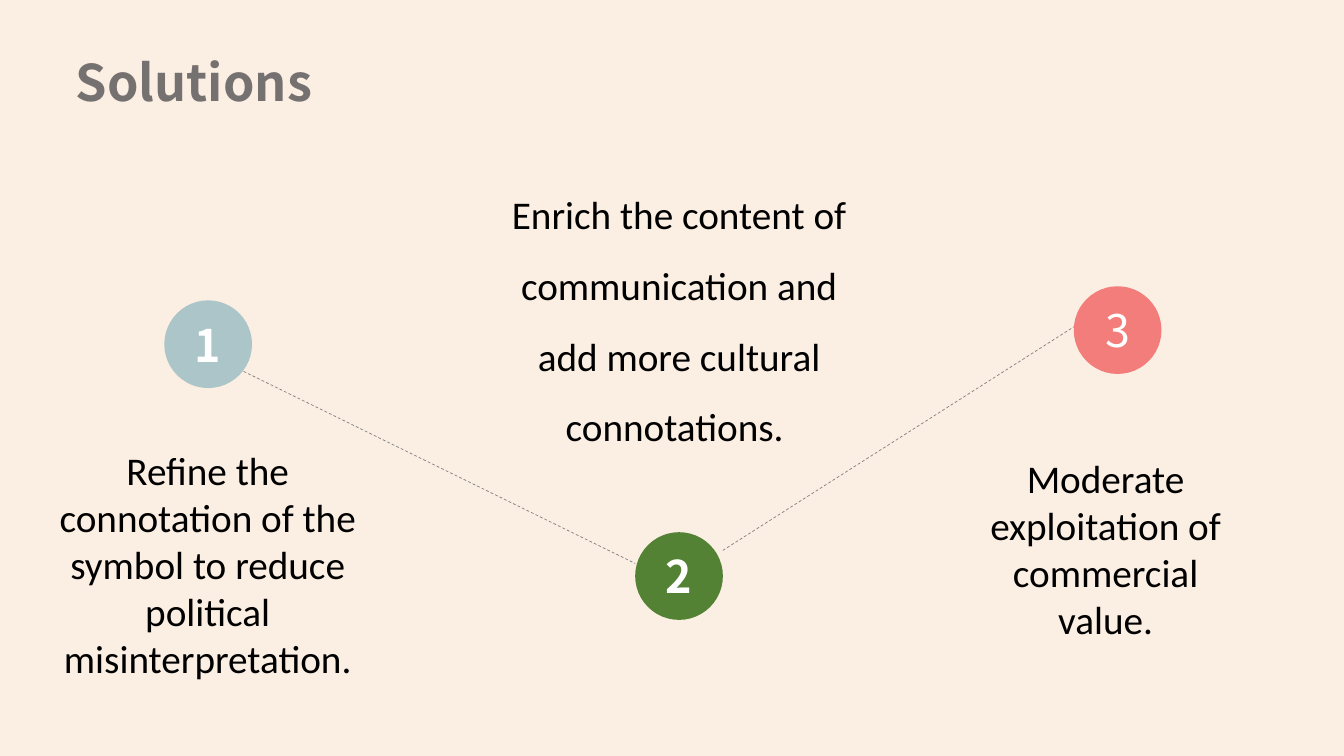
from dataclasses import dataclass

from lxml import etree
from pptx import Presentation
from pptx.dml.color import RGBColor
from pptx.enum.dml import MSO_LINE
from pptx.enum.shapes import MSO_CONNECTOR, MSO_SHAPE
from pptx.enum.text import MSO_ANCHOR, PP_ALIGN
from pptx.oxml.ns import qn
from pptx.util import Inches, Pt

STRAIGHT, OVAL, DASH = MSO_CONNECTOR.STRAIGHT, MSO_SHAPE.OVAL, MSO_LINE.DASH
TOP, MIDDLE = MSO_ANCHOR.TOP, MSO_ANCHOR.MIDDLE
LEFT, CENTER = PP_ALIGN.LEFT, PP_ALIGN.CENTER


@dataclass(frozen=True)
class Theme:
    background: str = "FBEEE3"
    heading: str = "767171"
    body: str = "000000"
    number: str = "FFFFFF"
    path_line: str = "808080"
    heading_font: str = "Noto Sans CJK SC"
    body_font: str = "Calibri"
    heading_size: int = 36
    number_size: int = 32
    body_size: int = 28
    line_width: float = 0.5


THEME = Theme()

# Content (lengths in inches)
SLIDE_SIZE = (13.33, 7.5)
BADGE_SIZE = 0.87
HEADING = {"text": "Solutions", "box": (0.65, 0.46, 4.55, 0.71)}
SOLUTIONS = [
    {"text": "Refine the connotation of the symbol to reduce political misinterpretation.",
     "box": (0.45, 4.38, 3.22, 2.46), "spacing": 1.0,
     "badge": (1.63, 2.98), "color": "ACC5C8", "bold": True},
    {"text": "Enrich the content of communication and add more cultural connotations. ",
     "box": (4.73, 1.61, 4.01, 3.34), "spacing": 1.5,
     "badge": (6.3, 5.28), "color": "548235", "bold": True},
    {"text": "Moderate exploitation of commercial value.",
     "box": (9.64, 4.46, 2.65, 1.99), "spacing": 1.0,
     "badge": (10.65, 2.84), "color": "F37D7B", "bold": False},
]
# Line ends as offsets from the top left of the badges they join
PATH_ENDS = [((0.43, 0.53), (0, 0.31)), ((0.87, 0.18), (0.13, 0.32))]


def rgb(value):
    return RGBColor.from_string(value)


def write(shape, text, font, size, color, bold=False, align=CENTER,
          anchor=TOP, spacing=1.0):
    frame = shape.text_frame
    frame.word_wrap = True
    frame.vertical_anchor = anchor
    frame.text = text
    paragraph = frame.paragraphs[0]
    for name, value in {"alignment": align, "line_spacing": spacing,
                        "space_before": Pt(0)}.items():
        setattr(paragraph, name, value)
    run = paragraph.runs[0]
    for name, value in {"name": font, "size": Pt(size), "bold": bold}.items():
        setattr(run.font, name, value)
    run.font.color.rgb = rgb(color)


def add_path(slide, start, end):
    line = slide.shapes.add_connector(STRAIGHT, *map(Inches, start + end))
    line.line.color.rgb = rgb(THEME.path_line)
    line.line.width = Pt(THEME.line_width)
    line.line.dash_style = DASH
    etree.SubElement(line._element.spPr, qn("a:effectLst"))


def add_badge(slide, number, solution):
    box = (*solution["badge"], BADGE_SIZE, BADGE_SIZE)
    badge = slide.shapes.add_shape(OVAL, *map(Inches, box))
    badge.shadow.inherit = False
    badge.fill.solid()
    badge.fill.fore_color.rgb = rgb(solution["color"])
    badge.line.fill.background()
    write(badge, str(number), THEME.heading_font, THEME.number_size,
          THEME.number, solution["bold"], anchor=MIDDLE)


def offset(solution, shift):
    return tuple(a + b for a, b in zip(solution["badge"], shift))


def main():
    deck = Presentation()
    deck.slide_width, deck.slide_height = map(Inches, SLIDE_SIZE)
    slide = deck.slides.add_slide(deck.slide_layouts[5])
    slide.background.fill.solid()
    slide.background.fill.fore_color.rgb = rgb(THEME.background)

    # Heading
    title = slide.shapes.title
    title.left, title.top, title.width, title.height = map(Inches, HEADING["box"])
    write(title, HEADING["text"], THEME.heading_font, THEME.heading_size,
          THEME.heading, bold=True, align=LEFT)

    # Dashed path between neighbouring badges
    for first, second, (start, end) in zip(SOLUTIONS, SOLUTIONS[1:], PATH_ENDS):
        add_path(slide, offset(first, start), offset(second, end))

    # Numbered solutions
    for number, solution in enumerate(SOLUTIONS, 1):
        caption = slide.shapes.add_textbox(*map(Inches, solution["box"]))
        write(caption, solution["text"], THEME.body_font, THEME.body_size,
              THEME.body, spacing=solution["spacing"])
        add_badge(slide, number, solution)

    deck.save("out.pptx")


if __name__ == "__main__":
    main()
